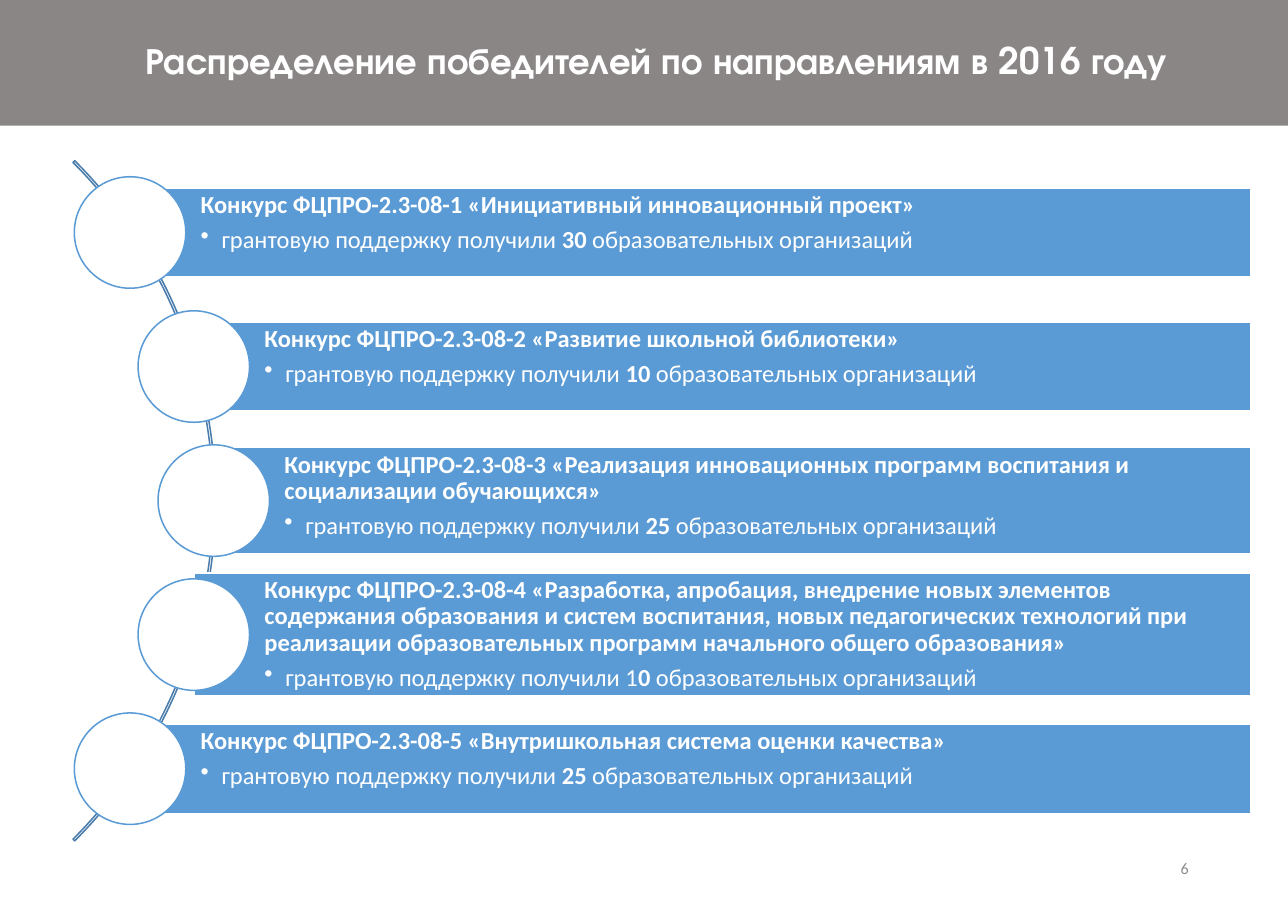
from lxml.etree import SubElement
from pptx import Presentation
from pptx.dml.color import RGBColor
from pptx.enum.shapes import MSO_SHAPE
from pptx.enum.text import MSO_ANCHOR, PP_ALIGN
from pptx.oxml.ns import qn
from pptx.util import Cm, Pt

WHITE = RGBColor(0xFF, 0xFF, 0xFF)
HEADER_GRAY = RGBColor(0x76, 0x71, 0x71)
NUMBER_GRAY = RGBColor(0x8C, 0x8C, 0x8C)
BLUE = RGBColor(0x5B, 0x9B, 0xD5)
ARC_BLUE = RGBColor(0x49, 0x7C, 0xAB)

BAR_RIGHT = 28.85
CIRCLE_SIZE = 2.57
FIRST_CENTER = 5.36
ROW_STEP = 3.09
GRANT_START = "грантовую поддержку получили "
GRANT_END = " образовательных организаций"

# Bar left, bar height, heading, plain digits, bold digits
CONTESTS = [
    (3.0, 2.06, "Конкурс ФЦПРО-2.3-08-1 «Инициативный инновационный проект»", "", "30"),
    (4.47, 2.06, "Конкурс ФЦПРО-2.3-08-2 «Развитие школьной библиотеки»", "", "10"),
    (4.93, 2.44, "Конкурс ФЦПРО-2.3-08-3 «Реализация инновационных программ "
     "воспитания и социализации обучающихся»", "", "25"),
    (4.47, 2.84, "Конкурс ФЦПРО-2.3-08-4 «Разработка, апробация, внедрение новых "
     "элементов содержания образования и систем воспитания, новых педагогических "
     "технологий при реализации образовательных программ начального общего "
     "образования»", "1", "0"),
    (3.0, 2.06, "Конкурс ФЦПРО-2.3-08-5 «Внутришкольная система оценки качества»", "", "25"),
]


def apply_format(target, values):
    for name, value in values.items():
        setattr(target, name, value)


class SlideBuilder:
    def __init__(self, page):
        self.page = page
        self.body_font = {"name": "Calibri", "size": Pt(16)}
        self.title_font = {"name": "TeX Gyre Adventor", "size": Pt(24), "bold": True}
        self.number_font = {"name": "Calibri", "size": Pt(10.5)}
        self.bar_frame = {
            "word_wrap": True, "vertical_anchor": MSO_ANCHOR.TOP,
            "margin_left": Cm(1.63), "margin_top": Cm(0.1),
            "margin_right": Cm(0.1), "margin_bottom": Cm(0.1),
        }

    def shape(self, kind, left, top, width, height, fill=None, line=None):
        shape = self.page.shapes.add_shape(kind, Cm(left), Cm(top), Cm(width), Cm(height))
        shape.shadow.inherit = False
        if fill is None:
            shape.fill.background()
        else:
            shape.fill.solid()
            shape.fill.fore_color.rgb = fill
        if line is None:
            shape.line.fill.background()
        else:
            shape.line.color.rgb = line
            shape.line.width = Pt(1)
        return shape

    def span(self, para, text, font, color=WHITE):
        span = para.add_run()
        span.text = text
        apply_format(span.font, font)
        span.font.color.rgb = color

    def indent(self, para, margin, first_line=0):
        properties = para._p.get_or_add_pPr()
        properties.set("marL", str(Cm(margin)))
        properties.set("indent", str(Cm(first_line)))
        return properties

    def header(self, text):
        band = self.shape(MSO_SHAPE.RECTANGLE, 0, 0, 29.8, 2.9, HEADER_GRAY)
        color = band.fill._xPr.find(qn("a:solidFill"))[0]
        SubElement(color, qn("a:alpha"), val="85000")
        apply_format(band.text_frame, {"word_wrap": True,
                                       "vertical_anchor": MSO_ANCHOR.MIDDLE})
        para = band.text_frame.paragraphs[0]
        apply_format(para, {"alignment": PP_ALIGN.CENTER, "line_spacing": 0.9})
        self.indent(para, 0.48)
        self.span(para, text, self.title_font)

    def arc(self):
        arc = self.shape(MSO_SHAPE.BLOCK_ARC, -17.2, 0.46, 22.17, 22.17, line=ARC_BLUE)
        for index, value in enumerate((189, 27, 0.0025)):
            arc.adjustments[index] = value

    def bar(self, left, center, height, heading, plain_digits, bold_digits):
        bar = self.shape(MSO_SHAPE.RECTANGLE, left, center - height / 2,
                         BAR_RIGHT - left, height, BLUE, WHITE)
        frame = bar.text_frame
        apply_format(frame, self.bar_frame)
        title, grant = frame.paragraphs[0], frame.add_paragraph()
        for para, gap in ((title, 5.6), (grant, 2.4)):
            apply_format(para, {"alignment": PP_ALIGN.LEFT, "line_spacing": 0.9,
                                "space_after": Pt(gap)})
        self.span(title, heading, {**self.body_font, "bold": True})
        grant.level = 1
        properties = self.indent(grant, 0.48, -0.48)
        SubElement(properties, qn("a:buChar"), char="•")
        for text, bold in ((GRANT_START + plain_digits, False),
                           (bold_digits, True), (GRANT_END, False)):
            self.span(grant, text, {**self.body_font, "bold": bold})

    def circle(self, center_x, center_y):
        radius = CIRCLE_SIZE / 2
        self.shape(MSO_SHAPE.OVAL, center_x - radius, center_y - radius,
                   CIRCLE_SIZE, CIRCLE_SIZE, WHITE, BLUE)

    def page_number(self, text):
        box = self.page.shapes.add_textbox(Cm(20.98), Cm(19.46), Cm(6.68), Cm(1.12))
        apply_format(box.text_frame, {"word_wrap": True,
                                      "vertical_anchor": MSO_ANCHOR.MIDDLE})
        para = box.text_frame.paragraphs[0]
        para.alignment = PP_ALIGN.RIGHT
        self.span(para, text, self.number_font, NUMBER_GRAY)


def main():
    deck = Presentation()
    apply_format(deck, {"slide_width": Cm(29.7), "slide_height": Cm(21)})
    builder = SlideBuilder(deck.slides.add_slide(deck.slide_layouts[6]))
    builder.header("Распределение победителей по направлениям в 2016 году")
    builder.page_number("6")
    builder.arc()
    for row, (left, height, *texts) in enumerate(CONTESTS):
        center = FIRST_CENTER + row * ROW_STEP
        builder.bar(left, center, height, *texts)
        builder.circle(left, center)
    deck.save("out.pptx")


if __name__ == "__main__":
    main()
